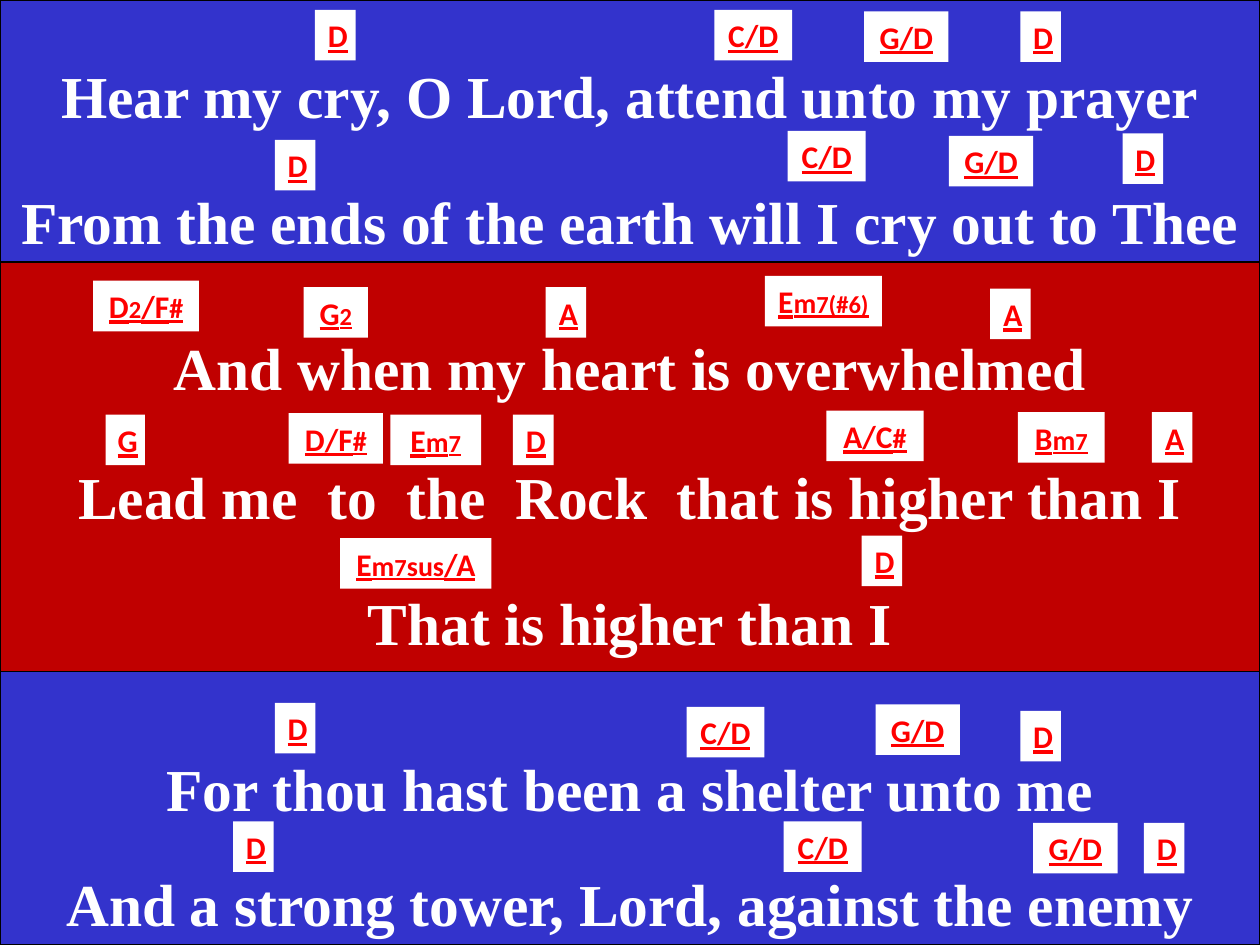
from dataclasses import dataclass

from pptx import Presentation
from pptx.dml.color import RGBColor
from pptx.enum.shapes import MSO_SHAPE
from pptx.enum.text import MSO_ANCHOR, MSO_AUTO_SIZE, PP_ALIGN
from pptx.util import Cm, Pt

RECTANGLE = MSO_SHAPE.RECTANGLE
TOP = MSO_ANCHOR.TOP
FIXED_SIZE = MSO_AUTO_SIZE.NONE
CENTER = PP_ALIGN.CENTER

PAGE_WIDTH, PAGE_HEIGHT = 25.4, 19.05
LYRIC_HEIGHT, CHORD_HEIGHT = 1.7, 1.02
TOP_INSET = 0.13


@dataclass(frozen=True)
class Theme:
    verse: RGBColor = RGBColor(0x33, 0x33, 0xCC)
    chorus: RGBColor = RGBColor(0xC0, 0x00, 0x00)
    outline: RGBColor = RGBColor(0x00, 0x00, 0x00)
    white: RGBColor = RGBColor(0xFF, 0xFF, 0xFF)
    chord: RGBColor = RGBColor(0xFF, 0x00, 0x00)
    lyric_font: str = "Times New Roman"
    chord_font: str = "Calibri"
    lyric_size: int = 34
    root_size: int = 18
    quality_size: int = 16
    number_size: int = 14


THEME = Theme()
ROOT, QUALITY, NUMBER = THEME.root_size, THEME.quality_size, THEME.number_size


@dataclass(frozen=True)
class Section:
    top: float
    bottom: float
    color: RGBColor


@dataclass(frozen=True)
class Chord:
    width: float
    spans: tuple[tuple[str, int], ...]


@dataclass(frozen=True)
class Lyric:
    """A sung line and its chords as (name, left, top)."""
    text: str
    top: float
    chords: tuple[tuple[str, float, float], ...]


SECTIONS = (
    Section(0, 5.28, THEME.verse),
    Section(5.28, 13.54, THEME.chorus),
    Section(13.54, PAGE_HEIGHT, THEME.verse),
)

CHORDS = {
    "A": Chord(0.82, (("A", ROOT),)),
    "D": Chord(0.82, (("D", ROOT),)),
    "G": Chord(0.79, (("G", ROOT),)),
    "C/D": Chord(1.57, (("C/D", ROOT),)),
    "G/D": Chord(1.7, (("G/D", ROOT),)),
    "G2": Chord(1.3, (("G", ROOT), ("2", NUMBER))),
    "D/F#": Chord(1.9, (("D/F", ROOT), ("#", QUALITY))),
    "A/C#": Chord(1.96, (("A/C", ROOT), ("#", QUALITY))),
    "D2/F#": Chord(2.13, (("D", ROOT), ("2", NUMBER), ("/F", ROOT), ("#", QUALITY))),
    "Bm7": Chord(1.75, (("B", ROOT), ("m", QUALITY), ("7", NUMBER))),
    "Em7": Chord(1.83, (("E", ROOT), ("m", QUALITY), ("7", NUMBER))),
    "Em7(#6)": Chord(2.36, (("E", ROOT), ("m", QUALITY), ("7(#6)", NUMBER))),
    "Em7sus/A": Chord(3.05, (("E", ROOT), ("m", QUALITY), ("7", NUMBER),
                             ("sus", QUALITY), ("/A", ROOT))),
}

LYRICS = (
    Lyric("Hear my cry, O Lord, attend unto my prayer", 1.07, (
        ("D", 6.35, 0.2), ("C/D", 14.4, 0.2), ("G/D", 17.42, 0.23), ("D", 20.57, 0.23))),
    Lyric("From the ends of the earth will I cry out to Thee", 3.61, (
        ("D", 5.54, 2.82), ("C/D", 15.88, 2.64), ("G/D", 19.13, 2.74), ("D", 22.63, 2.69))),
    Lyric("And when my heart is overwhelmed", 6.55, (
        ("D2/F#", 1.88, 5.66), ("G2", 6.12, 5.79), ("A", 11, 5.79),
        ("Em7(#6)", 15.42, 5.56), ("A", 19.96, 5.82))),
    Lyric("Lead me  to  the  Rock  that is higher than I", 9.14, (
        ("G", 2.13, 8.36), ("D/F#", 5.82, 8.33), ("Em7", 7.87, 8.36), ("D", 10.34, 8.36),
        ("A/C#", 16.66, 8.28), ("Bm7", 20.52, 8.31), ("A", 23.22, 8.31))),
    Lyric("That is higher than I", 11.68, (
        ("Em7sus/A", 6.86, 10.85), ("D", 17.37, 10.8))),
    Lyric("For thou hast been a shelter unto me", 15.04, (
        ("D", 5.54, 14.17), ("C/D", 13.84, 14.25), ("G/D", 17.65, 14.2), ("D", 20.57, 14.33))),
    Lyric("And a strong tower, Lord, against the enemy", 17.35, (
        ("D", 4.7, 16.56), ("C/D", 15.8, 16.56), ("G/D", 20.83, 16.59), ("D", 23.06, 16.59))),
)


def add_rectangle(page, left: float, top: float, width: float, height: float,
                  fill: RGBColor, outline: RGBColor | None = None):
    box = page.shapes.add_shape(RECTANGLE, Cm(left), Cm(top), Cm(width), Cm(height))
    box.shadow.inherit = False
    box.fill.solid()
    box.fill.fore_color.rgb = fill
    if outline is None:
        box.line.fill.background()
    else:
        box.line.color.rgb = outline
        box.line.width = Pt(0.75)
    return box


def add_span(para, text: str, *, size: int, font: str, color: RGBColor,
             underline: bool = False) -> None:
    span = para.add_run()
    span.text = text
    span.font.size = Pt(size)
    span.font.name = font
    span.font.color.rgb = color
    span.font.bold = True
    span.font.underline = underline


def prepare_text(box, *, wrap: bool, left_inset: float, right_inset: float):
    """Set up the text frame and return its centred paragraph."""
    frame = box.text_frame
    frame.word_wrap = wrap
    frame.auto_size = FIXED_SIZE
    frame.vertical_anchor = TOP
    frame.margin_left = Cm(left_inset)
    frame.margin_right = Cm(right_inset)
    frame.margin_top = Cm(TOP_INSET)
    frame.margin_bottom = Cm(0)
    para = frame.paragraphs[0]
    para.alignment = CENTER
    return para


def draw_lyric(page, lyric: Lyric) -> None:
    box = page.shapes.add_textbox(Cm(0), Cm(lyric.top), Cm(PAGE_WIDTH), Cm(LYRIC_HEIGHT))
    para = prepare_text(box, wrap=True, left_inset=0.25, right_inset=0.25)
    add_span(para, lyric.text, size=THEME.lyric_size, font=THEME.lyric_font,
             color=THEME.white)


def draw_chord(page, name: str, left: float, top: float) -> None:
    """Draw a chord label; a single letter sits slightly right of centre."""
    chord = CHORDS[name]
    box = add_rectangle(page, left, top, chord.width, CHORD_HEIGHT, THEME.white)
    left_inset = 0.1 if len(name) == 1 else 0
    para = prepare_text(box, wrap=False, left_inset=left_inset, right_inset=0)
    for text, size in chord.spans:
        add_span(para, text, size=size, font=THEME.chord_font, color=THEME.chord,
                 underline=True)


def main() -> None:
    deck = Presentation()
    deck.slide_width, deck.slide_height = Cm(PAGE_WIDTH), Cm(PAGE_HEIGHT)
    page = deck.slides.add_slide(deck.slide_layouts[6])
    for section in SECTIONS:
        add_rectangle(page, 0, section.top, PAGE_WIDTH, section.bottom - section.top,
                      section.color, THEME.outline)
    for lyric in LYRICS:
        draw_lyric(page, lyric)
    for lyric in LYRICS:
        for name, left, top in lyric.chords:
            draw_chord(page, name, left, top)
    deck.save("out.pptx")


if __name__ == "__main__":
    main()
